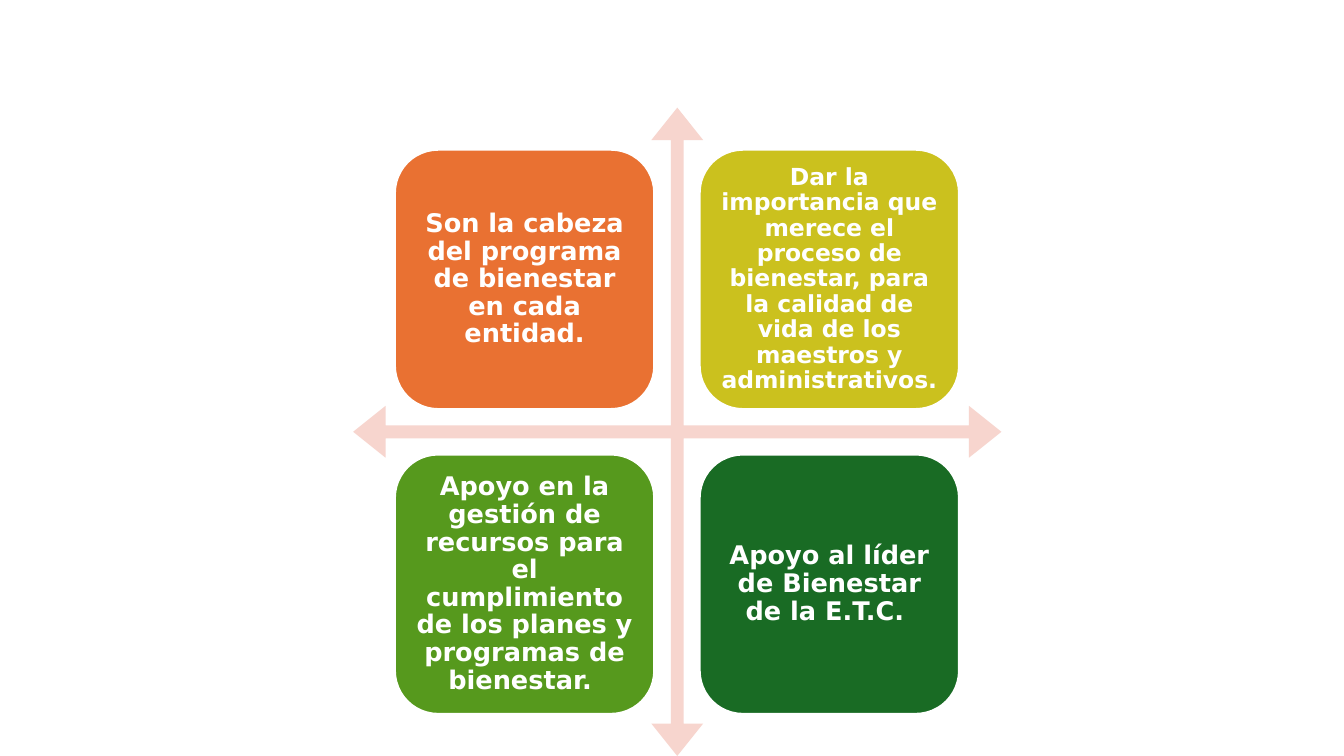
from dataclasses import dataclass

from pptx import Presentation
from pptx.dml.color import RGBColor
from pptx.enum.shapes import MSO_SHAPE as Kind
from pptx.enum.text import MSO_ANCHOR as Anchor, PP_ALIGN as Align
from pptx.shapes.autoshape import Shape
from pptx.shapes.shapetree import SlideShapes as Shapes
from pptx.util import Cm, Pt

WHITE = RGBColor(0xFF, 0xFF, 0xFF)
PINK = RGBColor(0xF7, 0xD5, 0xCE)
ORANGE = RGBColor(0xE9, 0x71, 0x32)
OLIVE = RGBColor(0xCB, 0xC1, 0x1E)
GREEN = RGBColor(0x56, 0x99, 0x1D)
FOREST = RGBColor(0x19, 0x6B, 0x24)

LEFT, TOP = 13.06, 4.95
SIDE, STEP = 8.58, 10.08


@dataclass
class Tile:
    text: str
    fill: RGBColor
    size: int = 24
    inset: float = 0.25


TILES = [
    Tile("Son la cabeza del programa de bienestar en cada entidad.", ORANGE),
    Tile("Dar la importancia que merece el proceso de bienestar, para la "
         "calidad de vida de los maestros y administrativos.", OLIVE, 22, 0.23),
    Tile("Apoyo en la gestión de recursos para el cumplimiento de los "
         "planes y programas de bienestar. ", GREEN),
    Tile("Apoyo al líder de Bienestar de la E.T.C. ", FOREST),
]


def apply(target: object, values: dict[str, object]) -> None:
    for name, value in values.items():
        setattr(target, name, value)


def add_square(shapes: Shapes, kind: Kind, left: float, top: float,
               side: float, fill: RGBColor) -> Shape:
    shape = shapes.add_shape(kind, Cm(left), Cm(top), Cm(side), Cm(side))
    shape.shadow.inherit = False
    shape.fill.solid()
    shape.fill.fore_color.rgb = fill
    return shape


def draw_cross(shapes: Shapes) -> None:
    cross = add_square(shapes, Kind.QUAD_ARROW, 11.68, 3.56, 21.44, PINK)
    cross.line.fill.background()
    for index, value in enumerate((0.02, 0.04, 0.05)):
        cross.adjustments[index] = value


def draw_tile(shapes: Shapes, tile: Tile, row: int, col: int) -> None:
    box = add_square(shapes, Kind.ROUNDED_RECTANGLE, LEFT + col * STEP,
                     TOP + row * STEP, SIDE, tile.fill)
    box.line.color.rgb = WHITE
    box.line.width = Pt(2)
    frame = box.text_frame
    inset = Cm(tile.inset)
    apply(frame, {"word_wrap": True, "vertical_anchor": Anchor.MIDDLE,
                  "margin_left": inset, "margin_right": inset,
                  "margin_top": inset, "margin_bottom": inset})
    para = frame.paragraphs[0]
    apply(para, {"alignment": Align.CENTER, "line_spacing": 0.9})
    run = para.add_run()
    run.text = tile.text
    apply(run.font, {"name": "DejaVu Sans", "size": Pt(tile.size),
                     "bold": True})
    run.font.color.rgb = WHITE


def main() -> None:
    deck = Presentation()
    apply(deck, {"slide_width": Cm(44.45), "slide_height": Cm(25)})
    shapes = deck.slides.add_slide(deck.slide_layouts[6]).shapes
    draw_cross(shapes)
    for index, tile in enumerate(TILES):
        draw_tile(shapes, tile, *divmod(index, 2))
    deck.save("out.pptx")


if __name__ == "__main__":
    main()
